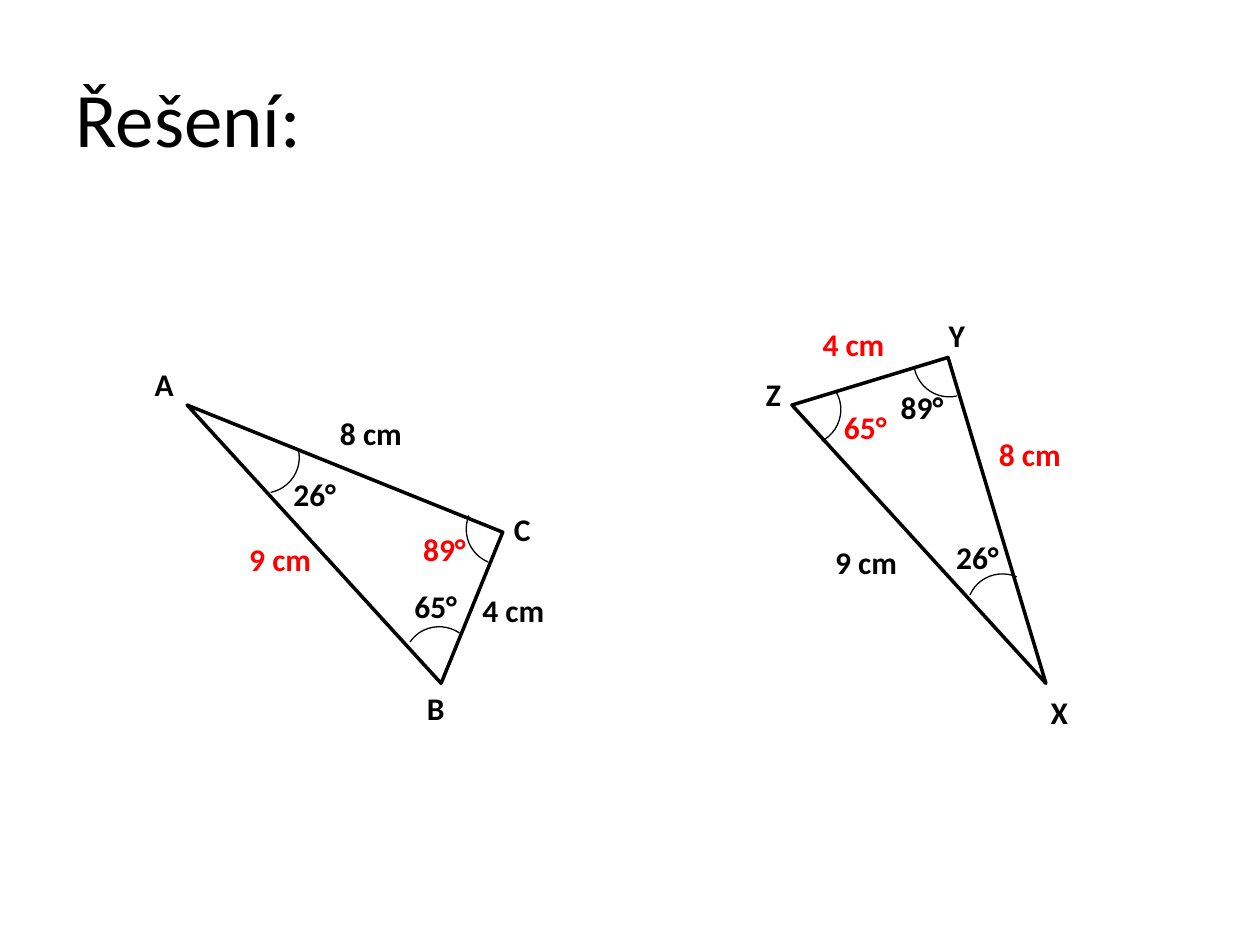
"""Build the solution slide with two congruent triangles."""
import dataclasses
import typing

import pptx
import pptx.dml.color
import pptx.enum.shapes
import pptx.enum.text
import pptx.util

Inches = pptx.util.Inches
Pt = pptx.util.Pt
RGB = pptx.dml.color.RGBColor
Shape = pptx.enum.shapes.MSO_SHAPE
Anchor = pptx.enum.text.MSO_ANCHOR
AutoSize = pptx.enum.text.MSO_AUTO_SIZE


@dataclasses.dataclass(frozen=True)
class Theme:
    font: str = "Calibri"
    ink: RGB = RGB(0, 0, 0)
    solved: RGB = RGB(255, 0, 0)
    paper: RGB = RGB(255, 255, 255)
    title_size: int = 44
    label_size: int = 18
    side_width: float = 2
    arc_width: float = 0.75


THEME = Theme()


class Triangle(typing.NamedTuple):
    left: float
    apex: float


class AngleArc(typing.NamedTuple):
    left: float
    top: float
    rotation: float


class Label(typing.NamedTuple):
    text: str
    left: float
    top: float
    solved: bool = False


TRIANGLES = [Triangle(1.43, 0.814), Triangle(6.23, 1 - 0.814)]

ANGLE_ARCS = [
    AngleArc(1.81, 3.35, 78),
    AngleArc(3.21, 4.97, 304.2),
    AngleArc(3.7, 3.91, 201.8),
    AngleArc(7.68, 4.55, 293.1),
    AngleArc(7.25, 2.58, 166.9),
    AngleArc(6.11, 2.97, 61.8),
]

VERTICES = [
    Label("A", 1.13, 2.85),
    Label("B", 3.29, 5.42),
    Label("C", 3.98, 4),
    Label("X", 8.24, 5.45),
    Label("Y", 7.43, 2.46),
    Label("Z", 5.98, 2.93),
]

SIDES = [
    Label("4 cm", 3.73, 4.64),
    Label("8 cm", 2.6, 3.24),
    Label("9 cm", 1.88, 4.24, True),
    Label("9 cm", 6.53, 4.26),
    Label("4 cm", 6.43, 2.53, True),
    Label("8 cm", 7.83, 3.4, True),
]

ANGLES = [
    Label("26°", 2.23, 3.72),
    Label("65°", 3.19, 4.61),
    Label("89°", 3.26, 4.16, True),
    Label("26°", 7.49, 4.22),
    Label("89°", 7.05, 3.03),
    Label("65°", 6.6, 3.19, True),
]


def apply_format(target, values: dict) -> None:
    """Set each named attribute on the target."""
    for name, value in values.items():
        setattr(target, name, value)


def add_text(slide, text: str, box: tuple, frame_format: dict, size: float,
             color: RGB, bold: bool) -> None:
    """Add one line of text in a box given in inches."""
    frame = slide.shapes.add_textbox(*map(Inches, box)).text_frame
    apply_format(frame, frame_format)
    run = frame.paragraphs[0].add_run()
    run.text = text
    apply_format(run.font, {"name": THEME.font, "size": Pt(size), "bold": bold})
    run.font.color.rgb = color


def add_label(slide, label: Label, width: float) -> None:
    """Add a bold label, red when its value was worked out."""
    add_text(slide, label.text, (label.left, label.top, width, 0.4),
             {"word_wrap": False, "auto_size": AutoSize.SHAPE_TO_FIT_TEXT},
             THEME.label_size, THEME.solved if label.solved else THEME.ink, True)


def add_outline(slide, preset: Shape, box: tuple, rotation: float, width: float):
    """Add a rotated, unfilled preset shape with a black line."""
    outline = slide.shapes.add_shape(preset, *map(Inches, box))
    outline.rotation = rotation
    outline.shadow.inherit = False
    outline.fill.background()
    outline.line.color.rgb = THEME.ink
    outline.line.width = Pt(width)
    return outline


def add_triangle(slide, triangle: Triangle) -> None:
    """Add a white triangle with its apex at a fraction of the base."""
    outline = add_outline(slide, Shape.ISOSCELES_TRIANGLE,
                          (triangle.left, 3.34, 2.99, 1.17), 47.6, THEME.side_width)
    outline.adjustments[0] = triangle.apex
    outline.fill.solid()
    outline.fill.fore_color.rgb = THEME.paper


def main() -> None:
    """Build and save the slide."""
    presentation = pptx.Presentation()
    apply_format(presentation, {"slide_width": Inches(10), "slide_height": Inches(7.5)})
    slide = presentation.slides.add_slide(presentation.slide_layouts[6])
    add_text(slide, "Řešení:", (0.5, 0.3, 9, 1.25),
             {"word_wrap": True, "vertical_anchor": Anchor.MIDDLE},
             THEME.title_size, THEME.ink, False)
    for triangle in TRIANGLES:
        add_triangle(slide, triangle)
    for arc in ANGLE_ARCS:
        add_outline(slide, Shape.ARC, (arc.left, arc.top, 0.56, 0.57),
                    arc.rotation, THEME.arc_width)
    for labels, width in ((VERTICES, 0.34), (SIDES, 0.7), (ANGLES, 0.54)):
        for label in labels:
            add_label(slide, label, width)
    presentation.save("out.pptx")


if __name__ == "__main__":
    main()
